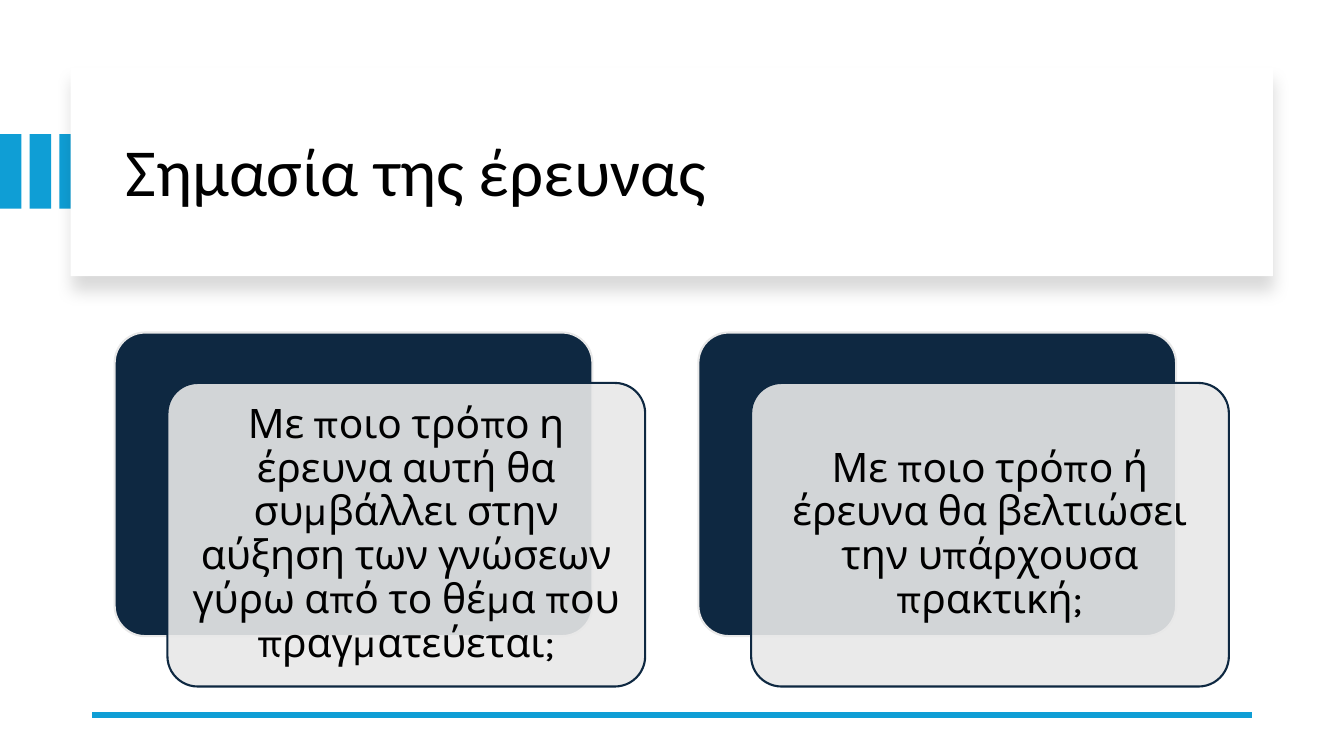
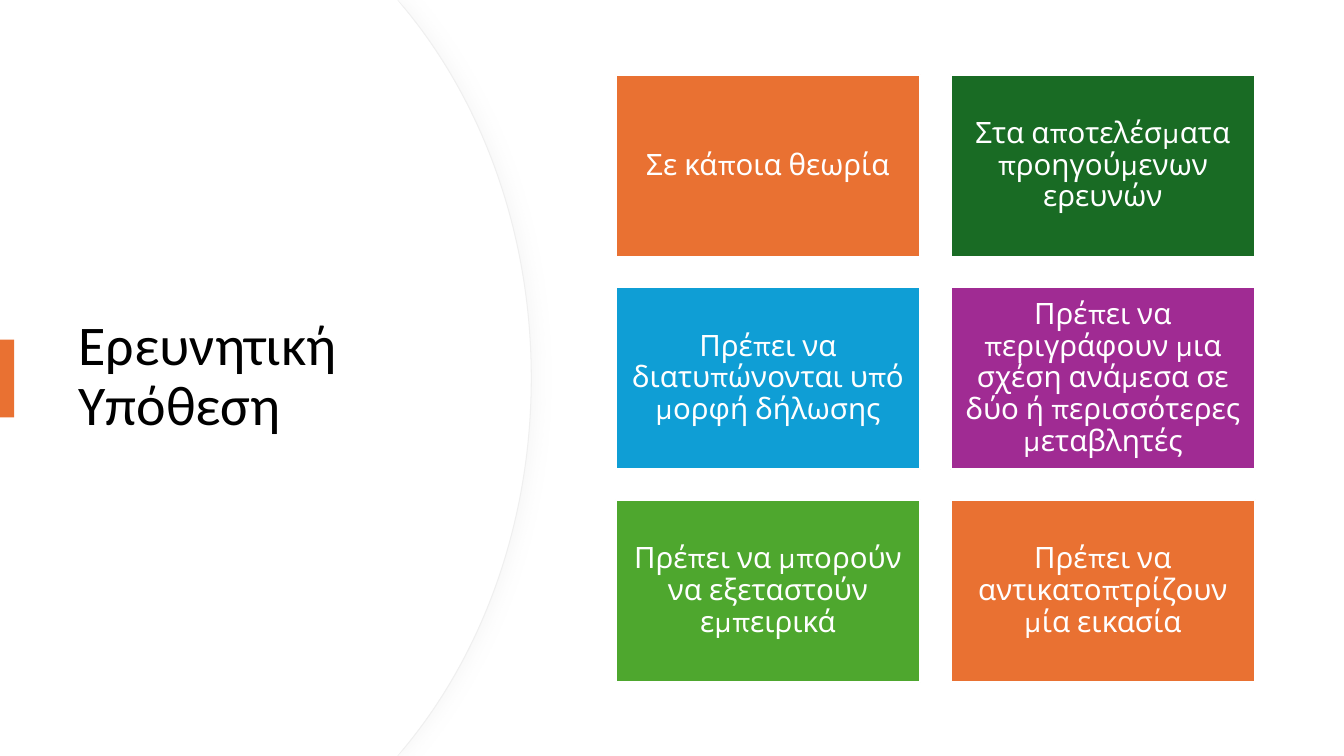
from dataclasses import dataclass

from lxml import etree
from pptx import Presentation
from pptx import util as u
from pptx.dml.color import RGBColor
from pptx.enum import shapes, text
from pptx.oxml.ns import qn

SIGNIFICANCE = {
    "title": "Σημασία της έρευνας",
    "cards": [
        "Με ποιο τρόπο η έρευνα αυτή θα συμβάλλει στην αύξηση των γνώσεων "
        "γύρω από το θέμα που πραγματεύεται;",
        "Με ποιο τρόπο ή έρευνα θα βελτιώσει την υπάρχουσα πρακτική;",
    ],
}
HYPOTHESIS = {
    "title": "Eρευνητική Yπόθεση",
    "tiles": [
        ("Σε κάποια θεωρία", "orange"),
        ("Στα αποτελέσματα προηγούμενων ερευνών", "dark_green"),
        ("Πρέπει να διατυπώνονται υπό μορφή δήλωσης", "blue"),
        ("Πρέπει να περιγράφουν μια σχέση ανάμεσα σε δύο ή περισσότερες μεταβλητές",
         "purple"),
        ("Πρέπει να μπορούν να εξεταστούν εμπειρικά", "green"),
        ("Πρέπει να αντικατοπτρίζουν μία εικασία", "orange"),
    ],
}


@dataclass(frozen=True)
class Theme:
    black: str = "000000"
    white: str = "FFFFFF"
    navy: str = "0E2841"
    pale: str = "E8E8E8"
    edge: str = "EFEFEF"
    haze: str = "D9D9D9"
    blue: str = "0F9ED5"
    orange: str = "E97132"
    green: str = "4EA72E"
    dark_green: str = "196B24"
    purple: str = "A02B93"
    title_font: str = "Calibri"
    body_font: str = "Karla"
    wide_title: float = 48
    side_title: float = 40
    card_text: float = 29
    tile_text: float = 21
    outline: float = 1.5


THEME = Theme()
WIDTH, HEIGHT = 33.87, 19.05
RECT = shapes.MSO_SHAPE.RECTANGLE
ROUNDED = shapes.MSO_SHAPE.ROUNDED_RECTANGLE


def apply(target, values):
    for name, value in values.items():
        setattr(target, name, value)


def paint(shape, fill, line=None, line_width=THEME.outline, alpha=None):
    shape.shadow.inherit = False
    shape.fill.solid()
    shape.fill.fore_color.rgb = RGBColor.from_string(fill)
    if alpha is not None:
        color = shape.element.spPr.find(qn("a:solidFill"))[0]
        etree.SubElement(color, qn("a:alpha"), val=str(alpha * 1000))
    if line:
        shape.line.color.rgb = RGBColor.from_string(line)
        shape.line.width = u.Pt(line_width)
    else:
        shape.line.fill.background()


def cast_shadow(shape, color, alpha, blur, distance, degrees):
    effects = shape.element.spPr.find(qn("a:effectLst"))
    shadow = etree.SubElement(
        effects, qn("a:outerShdw"), blurRad=str(u.Pt(blur)),
        dist=str(u.Pt(distance)), dir=str(degrees * 60000),
        algn="ctr", rotWithShape="0")
    tint = etree.SubElement(shadow, qn("a:srgbClr"), val=color)
    etree.SubElement(tint, qn("a:alpha"), val=str(alpha * 1000))


def write(shape, words, font, size, color, align, inset=0.25):
    frame = shape.text_frame
    margin = u.Cm(inset)
    apply(frame, {
        "text": words, "word_wrap": True,
        "auto_size": text.MSO_AUTO_SIZE.NONE,
        "vertical_anchor": text.MSO_ANCHOR.MIDDLE,
        "margin_left": margin, "margin_right": margin,
        "margin_top": margin, "margin_bottom": margin,
    })
    para = frame.paragraphs[0]
    apply(para, {"alignment": align, "line_spacing": 0.9})
    span = para.runs[0]
    apply(span.font, {"name": font, "size": u.Pt(size)})
    span.font.color.rgb = RGBColor.from_string(color)


def add_box(page, kind, place, fill, **look):
    box = page.shapes.add_shape(kind, *map(u.Cm, place))
    if kind == ROUNDED:
        box.adjustments[0] = 0.1
    paint(box, fill, **look)
    return box


def place_title(page, words, place, size, above):
    """Format the title and stack it directly above the given shape."""
    title = page.shapes.title
    apply(title, dict(zip(("left", "top", "width", "height"), map(u.Cm, place))))
    write(title, words, THEME.title_font, size, THEME.black, text.PP_ALIGN.LEFT)
    above.element.addnext(title.element)


def add_rule(page, left, right, top):
    rule = page.shapes.add_connector(
        shapes.MSO_CONNECTOR.STRAIGHT, *map(u.Cm, (right, top, left, top)))
    rule.line.color.rgb = RGBColor.from_string(THEME.blue)
    rule.line.width = u.Pt(4.5)
    etree.SubElement(rule.element.spPr, qn("a:effectLst"))


def bend(segment, controls):
    """Turn a straight path segment into a cubic curve."""
    segment.tag = qn("a:cubicBezTo")
    for index, (x, y) in enumerate(controls):
        point = etree.Element(qn("a:pt"), x=str(u.Cm(x)), y=str(u.Cm(y)))
        segment.insert(index, point)


def add_disc(page, edge, **look):
    """Draw a panel whose right side bulges out to the given edge."""
    corner, shoulder = (10.01, 0), (edge - 3.2, 0.2)
    controls = [(edge - 1.22, 2.59), (edge, 5.89)]

    def mirror(points):
        return [(x, HEIGHT - y) for x, y in reversed(points)]

    outline = [corner, shoulder, (edge, HEIGHT / 2),
               *mirror([corner, shoulder]), (0, HEIGHT)]
    builder = page.shapes.build_freeform(0, 0)
    builder.add_line_segments([(u.Cm(x), u.Cm(y)) for x, y in outline], close=True)
    disc = builder.convert_to_shape()
    segments = list(disc.element.spPr.iter(qn("a:lnTo")))
    bend(segments[2], controls)
    bend(segments[3], mirror(controls))
    paint(disc, THEME.white, **look)
    return disc


def build_significance(page):
    for index in range(3):
        add_box(page, RECT, (index * 0.75, 3.38, 0.54, 1.88), THEME.blue)
    panel = add_box(page, RECT, (1.78, 1.7, 30.3, 5.26), THEME.white)
    cast_shadow(panel, THEME.black, 15, 11, 10, 90)
    place_title(page, SIGNIFICANCE["title"], (2.92, 2.24, 28.27, 4.32),
                THEME.wide_title, panel)
    add_rule(page, 2.33, 31.55, 18.01)

    left, top, width, height, pitch = 2.89, 8.38, 12.04, 7.65, 14.71
    for index, words in enumerate(SIGNIFICANCE["cards"]):
        x = left + index * pitch
        add_box(page, ROUNDED, (x, top, width, height), THEME.navy, line=THEME.pale)
        card = add_box(page, ROUNDED, (x + 1.33, top + 1.27, width, height),
                       THEME.pale, line=THEME.navy, alpha=90)
        write(card, words, THEME.body_font, THEME.card_text, THEME.black,
              text.PP_ALIGN.CENTER, inset=0.3)


def build_hypothesis(page):
    rim = add_disc(page, 13.39, line=THEME.edge, line_width=0.75)
    cast_shadow(rim, THEME.haze, 20, 12, 3, 0)
    face = add_disc(page, 13.36)
    place_title(page, HYPOTHESIS["title"], (1.73, 3.23, 10.01, 12.57),
                THEME.side_title, face)
    add_box(page, RECT, (0, 8.56, 0.36, 1.96), THEME.orange)

    left, top, width, height, gap = 15.52, 1.88, 7.67, 4.59, 0.77
    for index, (words, color) in enumerate(HYPOTHESIS["tiles"]):
        row, column = divmod(index, 2)
        place = (left + column * (width + gap), top + row * (height + gap),
                 width, height)
        tile = add_box(page, RECT, place, getattr(THEME, color), line=THEME.white)
        write(tile, words, THEME.body_font, THEME.tile_text, THEME.white,
              text.PP_ALIGN.CENTER, inset=0.23)


def main():
    deck = Presentation()
    apply(deck, {"slide_width": u.Cm(WIDTH), "slide_height": u.Cm(HEIGHT)})
    title_only = deck.slide_layouts[5]
    for build in (build_significance, build_hypothesis):
        build(deck.slides.add_slide(title_only))
    deck.save("out.pptx")


if __name__ == "__main__":
    main()
